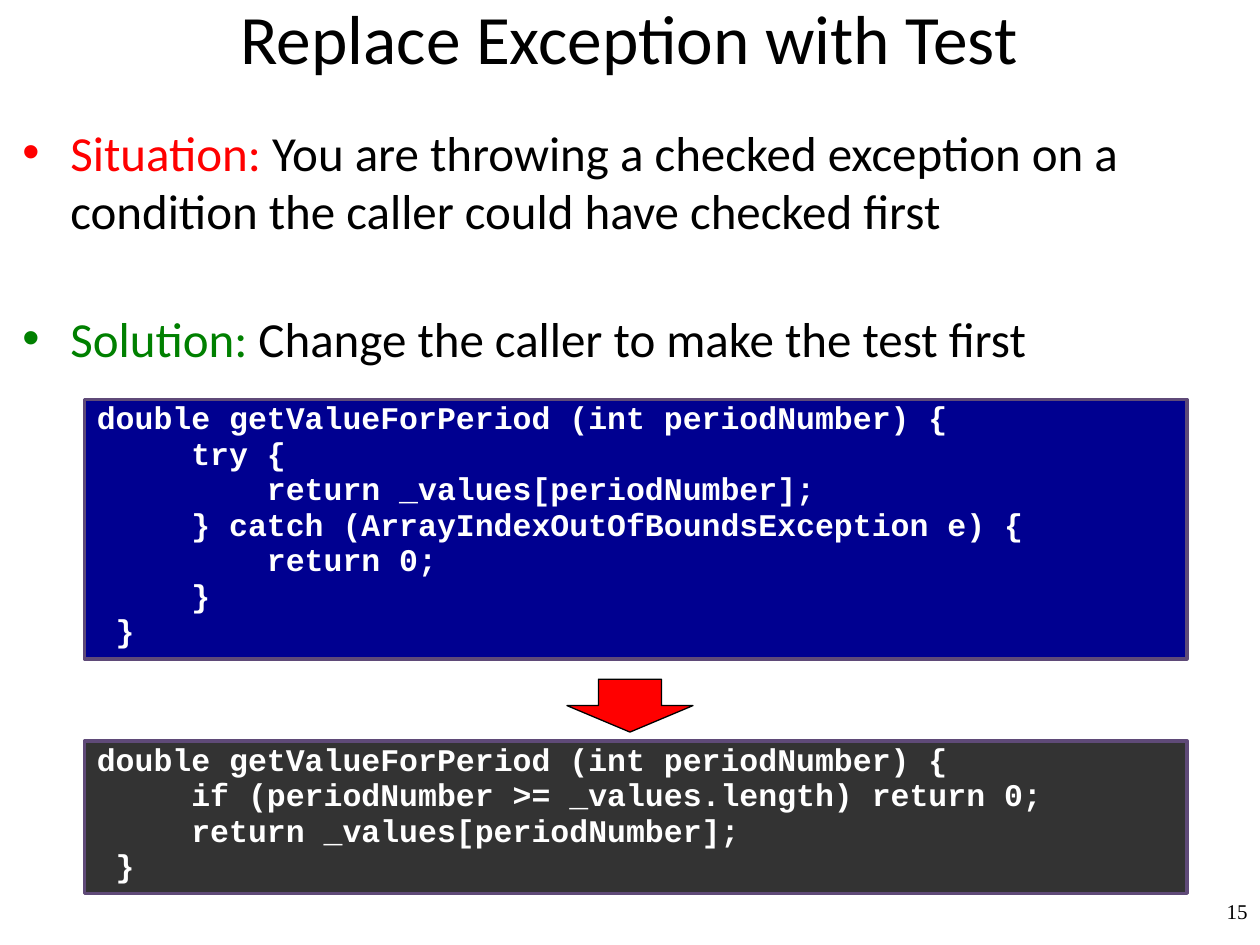
from dataclasses import dataclass

from lxml.etree import SubElement
from pptx import Presentation
from pptx.dml.color import RGBColor
from pptx.enum.shapes import MSO_SHAPE
from pptx.enum.text import MSO_ANCHOR, MSO_AUTO_SIZE, PP_ALIGN
from pptx.oxml.ns import qn
from pptx.util import Inches, Pt


@dataclass(frozen=True)
class Theme:
    black: RGBColor = RGBColor(0x00, 0x00, 0x00)
    white: RGBColor = RGBColor(0xFF, 0xFF, 0xFF)
    red: RGBColor = RGBColor(0xFF, 0x00, 0x00)
    green: RGBColor = RGBColor(0x00, 0x80, 0x00)
    before_fill: RGBColor = RGBColor(0x00, 0x00, 0x90)
    after_fill: RGBColor = RGBColor(0x33, 0x33, 0x33)
    code_border: RGBColor = RGBColor(0x5F, 0x4A, 0x78)
    body_font: str = "Calibri"
    code_font: str = "Courier New"
    number_font: str = "Times New Roman"
    title_size: Pt = Pt(39.6)
    body_size: Pt = Pt(28)
    code_size: Pt = Pt(18)
    number_size: Pt = Pt(12)


theme = Theme()
CODE_COLUMN = Inches(0.15)  # width of one character of code


def set_font(paragraph, name, size, color):
    paragraph.font.name = name
    paragraph.font.size = size
    paragraph.font.color.rgb = color


def add_filled_shape(kind, left, top, width, height, fill, line, line_width):
    shape = slide.shapes.add_shape(
        kind, Inches(left), Inches(top), Inches(width), Inches(height))
    shape.shadow.inherit = False
    shape.fill.solid()
    shape.fill.fore_color.rgb = fill
    shape.line.color.rgb = line
    shape.line.width = Pt(line_width)
    return shape


presentation = Presentation()
presentation.slide_width = Inches(10)
presentation.slide_height = Inches(7.5)
slide = presentation.slides.add_slide(presentation.slide_layouts[5])

# Title
title = slide.shapes.title
title.left, title.top = Inches(0.08), Inches(0)
title.width, title.height = Inches(9.83), Inches(0.58)
title.text_frame.text = "Replace Exception with Test"
title.text_frame.auto_size = MSO_AUTO_SIZE.NONE
title.text_frame.vertical_anchor = MSO_ANCHOR.MIDDLE
paragraph = title.text_frame.paragraphs[0]
paragraph.alignment = PP_ALIGN.CENTER
set_font(paragraph, theme.body_font, theme.title_size, theme.black)

# Situation and solution
body = slide.shapes.add_textbox(Inches(0.08), Inches(0.92), Inches(9.92), Inches(2.2))
body.text_frame.word_wrap = True
points = [
    ("Situation:", theme.red, 0,
     " You are throwing a checked exception on a condition the caller could have checked first"),
    ("Solution:", theme.green, 39, " Change the caller to make the test first"),
]
for index, (label, label_color, space_before, sentence) in enumerate(points):
    paragraph = body.text_frame.paragraphs[0] if index == 0 else body.text_frame.add_paragraph()
    paragraph.space_before = Pt(space_before)
    set_font(paragraph, theme.body_font, theme.body_size, theme.black)
    for text, color in ((label, label_color), (sentence, theme.black)):
        run = paragraph.add_run()
        run.text = text
        run.font.color.rgb = color
    properties = paragraph._p.get_or_add_pPr()
    properties.set("marL", str(Inches(0.38)))
    properties.set("indent", str(-Inches(0.38)))
    bullet_font = SubElement(properties, qn("a:buFont"))
    bullet_font.set("typeface", "Arial")
    bullet = SubElement(properties, qn("a:buChar"))
    bullet.set("char", "•")
    # The bullet font and character must precede the default run properties.
    properties.append(properties.find(qn("a:defRPr")))

# Code before and after; each line is (indent in columns, text)
signature = (0, "double getValueForPeriod (int periodNumber) {")
code_blocks = [
    (3.17, 2.06, theme.before_fill, [
        signature,
        (5, "try {"),
        (9, "return _values[periodNumber];"),
        (5, "} catch (ArrayIndexOutOfBoundsException e) {"),
        (9, "return 0;"),
        (5, "}"),
        (1, "}"),
    ]),
    (5.88, 1.21, theme.after_fill, [
        signature,
        (5, "if (periodNumber >= _values.length) return 0;"),
        (5, "return _values[periodNumber];"),
        (1, "}"),
    ]),
]
for top, height, fill, lines in code_blocks:
    code_box = add_filled_shape(
        MSO_SHAPE.RECTANGLE, 0.67, top, 8.75, height, fill, theme.code_border, 2)
    frame = code_box.text_frame
    frame.word_wrap = True
    frame.auto_size = MSO_AUTO_SIZE.SHAPE_TO_FIT_TEXT
    frame.vertical_anchor = MSO_ANCHOR.TOP
    frame.text = "\n".join(text for _, text in lines)
    for paragraph, (columns, _) in zip(frame.paragraphs, lines):
        paragraph.alignment = PP_ALIGN.LEFT
        paragraph.line_spacing = 0.8
        paragraph.space_after = Pt(3)
        paragraph.font.bold = True
        set_font(paragraph, theme.code_font, theme.code_size, theme.white)
        paragraph._p.get_or_add_pPr().set("marL", str(columns * CODE_COLUMN))

add_filled_shape(MSO_SHAPE.DOWN_ARROW, 4.5, 5.39, 1, 0.42, theme.red, theme.black, 0.75)

# Slide number
number_box = slide.shapes.add_textbox(Inches(7.92), Inches(7.08), Inches(2.08), Inches(0.42))
number_box.text_frame.word_wrap = True
number_box.text_frame.text = "15"
paragraph = number_box.text_frame.paragraphs[0]
paragraph.alignment = PP_ALIGN.RIGHT
set_font(paragraph, theme.number_font, theme.number_size, theme.black)

presentation.save("out.pptx")
